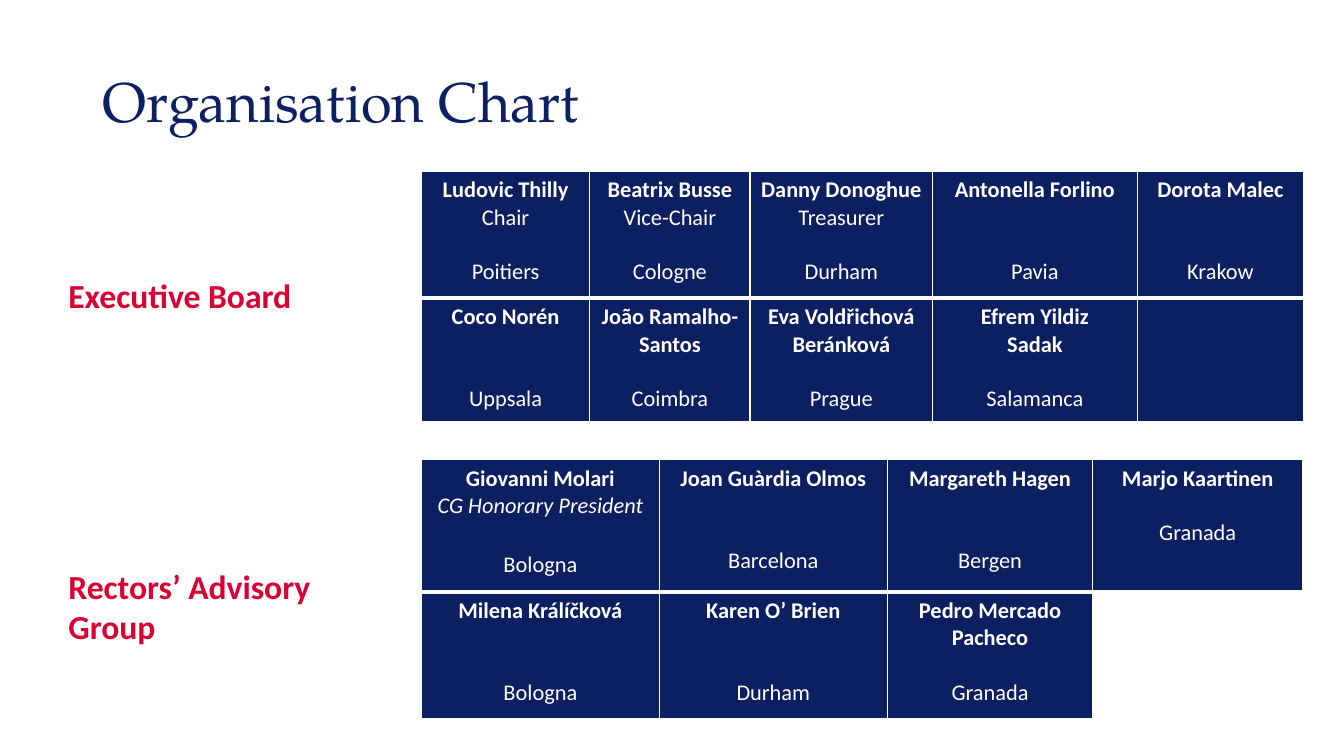
"""Build the organisation chart slide: two boards, each with a label and a table of members."""
from dataclasses import dataclass
from typing import Optional

import pptx
import pptx.dml.color
import pptx.enum.text
import pptx.oxml
import pptx.oxml.ns
import pptx.util

Inches = pptx.util.Inches
Pt = pptx.util.Pt
PP_ALIGN = pptx.enum.text.PP_ALIGN
NAVY, RED, WHITE = "0C1F61", "D90034", "FFFFFF"
BODY_FONT, TITLE_FONT = "Calibri", "TeX Gyre Pagella"
LINE_PITCH = 19.5
TABLE_LEFT, LABEL_LEFT = 4.18, 0.58


@dataclass
class Member:
    """A board member; gap is the space above the city, in text lines."""
    name: str
    city: str
    gap: float = 1
    role: str = ""
    italic_role: bool = False


@dataclass
class Board:
    """A labelled group of members laid out in rows."""
    label: str
    label_top: float
    label_width: float
    label_height: float
    top: float
    widths: list[float]
    heights: list[float]
    rows: list[list[Optional[Member]]]
    fill_empty: bool


BOARDS = [
    Board("Executive Board", 2.68, 2.44, 0.5, 1.7,
          [1.67, 1.59, 1.81, 2.03, 1.65], [1.26, 1.22],
          [[Member("Ludovic Thilly", "Poitiers", role="Chair"),
            Member("Beatrix Busse", "Cologne", role="Vice-Chair"),
            Member("Danny Donoghue", "Durham", role="Treasurer"),
            Member("Antonella Forlino", "Pavia", 2),
            Member("Dorota Malec", "Krakow", 2)],
           [Member("Coco Norén", "Uppsala", 2),
            Member("João Ramalho-Santos", "Coimbra"),
            Member("Eva Voldřichová Beránková", "Prague"),
            Member("Efrem Yildiz\nSadak", "Salamanca"),
            None]], True),
    Board("Rectors’ Advisory\nGroup", 5.56, 3.56, 0.91, 4.56,
          [2.36, 2.26, 2.04, 2.08], [1.31, 1.26],
          [[Member("Giovanni Molari", "Bologna", 1.15, "CG Honorary President", True),
            Member("Joan Guàrdia Olmos", "Barcelona", 2),
            Member("Margareth Hagen", "Bergen", 2),
            Member("Marjo Kaartinen", "Granada")],
           [Member("Milena Králíčková", "Bologna", 2),
            Member("Karen O’ Brien", "Durham", 2),
            Member("Pedro Mercado Pacheco", "Granada"),
            None]], False),
]


def rgb(value: str) -> pptx.dml.color.RGBColor:
    """Turn a hex string into a colour."""
    return pptx.dml.color.RGBColor.from_string(value)


def style(p, size: float, color: str, align, font: str = BODY_FONT,
          bold: bool = False, italic: bool = False) -> None:
    """Format a paragraph and its runs."""
    p.alignment = align
    for r in p.runs:
        r.font.name, r.font.size = font, Pt(size)
        r.font.bold, r.font.italic = bold, italic
        r.font.color.rgb = rgb(color)


def set_borders(cell, **widths: float) -> None:
    """Give a cell white borders, with widths in points by side."""
    tc_pr = cell._tc.get_or_add_tcPr()
    for side in "LRTB":
        tc_pr.append(pptx.oxml.parse_xml(
            f'<a:ln{side} {pptx.oxml.ns.nsdecls("a")} w="{Pt(widths.get(side, 1))}">'
            f'<a:solidFill><a:srgbClr val="{WHITE}"/></a:solidFill></a:ln{side}>'))


def write_member(cell, member: Member) -> None:
    """Write the name, role and city of a member into a cell."""
    names = member.name.split("\n")
    roles = [member.role] if member.role else []
    tf = cell.text_frame
    tf.text = "\n".join(names + roles + [member.city])
    for i, p in enumerate(tf.paragraphs):
        is_role = len(names) <= i < len(names) + len(roles)
        style(p, 16, WHITE, PP_ALIGN.CENTER, bold=i < len(names),
              italic=is_role and member.italic_role)
    tf.paragraphs[-1].space_before = Pt(round(member.gap * LINE_PITCH, 1))


def add_label(slide, board: Board) -> None:
    """Add the red label beside a board."""
    tf = slide.shapes.add_textbox(Inches(LABEL_LEFT), Inches(board.label_top),
                                  Inches(board.label_width),
                                  Inches(board.label_height)).text_frame
    tf.word_wrap = True
    tf.auto_size = pptx.enum.text.MSO_AUTO_SIZE.SHAPE_TO_FIT_TEXT
    tf.text = board.label
    for p in tf.paragraphs:
        style(p, 24, RED, PP_ALIGN.JUSTIFY, bold=True)


def add_members(slide, board: Board) -> None:
    """Add the table of members of a board."""
    table = slide.shapes.add_table(
        len(board.rows), len(board.widths), Inches(TABLE_LEFT), Inches(board.top),
        Inches(sum(board.widths)), Inches(sum(board.heights))).table
    table.first_row = table.horz_banding = False
    for column, width in zip(table.columns, board.widths):
        column.width = Inches(width)
    for i, (row, height) in enumerate(zip(board.rows, board.heights)):
        table.rows[i].height = Inches(height)
        for j, member in enumerate(row):
            cell = table.cell(i, j)
            set_borders(cell, **({"B": 3} if i == 0 else {"T": 3}))
            if member or board.fill_empty:
                cell.fill.solid()
                cell.fill.fore_color.rgb = rgb(NAVY)
            else:
                cell.fill.background()
            if member:
                write_member(cell, member)


def add_title(slide, text: str) -> None:
    """Place and format the title."""
    sp = slide.shapes.title
    sp.left, sp.top, sp.width, sp.height = map(Inches, (0.92, 0.37, 11.5, 1.34))
    tf = sp.text_frame
    tf.text = text
    tf.auto_size = pptx.enum.text.MSO_AUTO_SIZE.NONE
    tf.vertical_anchor = pptx.enum.text.MSO_ANCHOR.MIDDLE
    p = tf.paragraphs[0]
    p.line_spacing = 0.9
    style(p, 40, NAVY, PP_ALIGN.LEFT, TITLE_FONT)


def main() -> None:
    """Build and save the presentation."""
    prs = pptx.Presentation()
    prs.slide_width, prs.slide_height = Inches(13.33), Inches(7.5)
    slide = prs.slides.add_slide(prs.slide_layouts[5])
    add_title(slide, "Organisation Chart")
    for board in BOARDS:
        add_label(slide, board)
        add_members(slide, board)
    prs.save("out.pptx")


if __name__ == "__main__":
    main()
